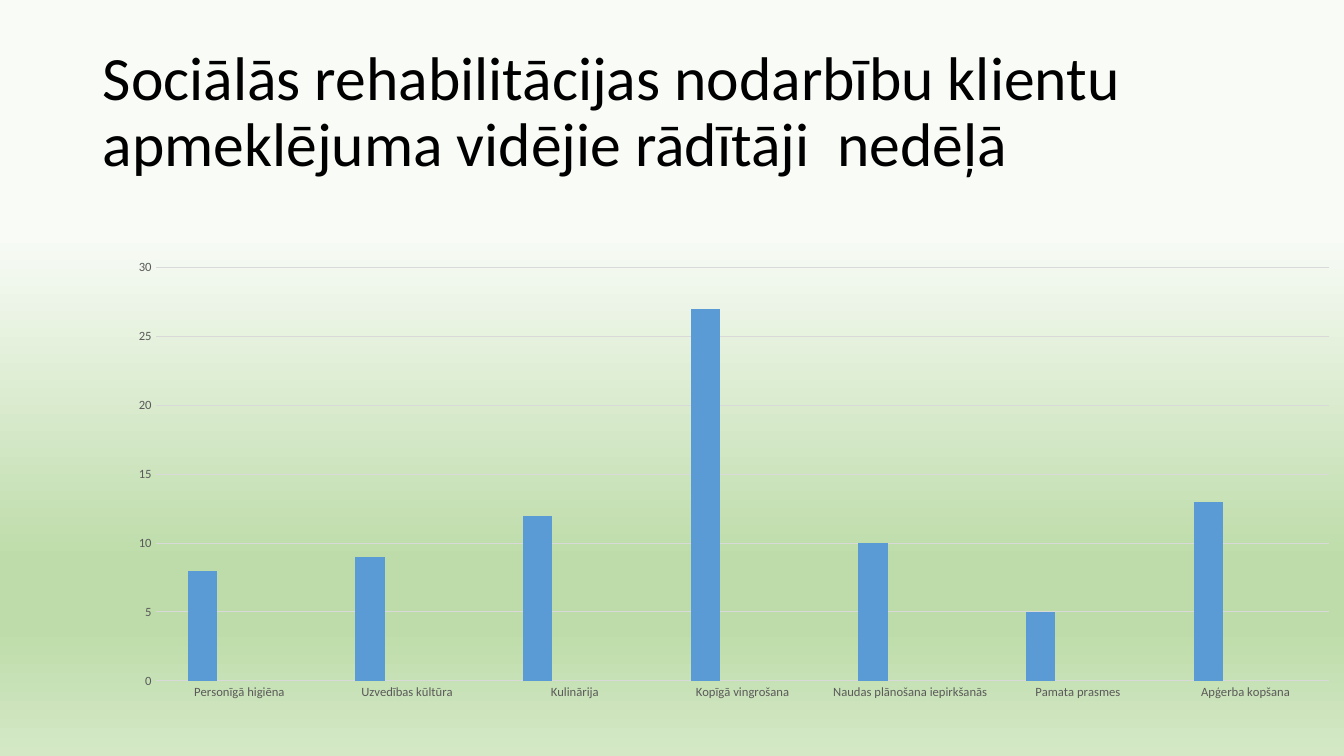
from typing import NamedTuple

from lxml.etree import SubElement
from pptx import Presentation
from pptx.chart.data import CategoryChartData
from pptx.dml.color import RGBColor
from pptx.enum.chart import XL_CHART_TYPE, XL_TICK_MARK
from pptx.enum.text import MSO_ANCHOR, MSO_AUTO_SIZE
from pptx.oxml.ns import qn
from pptx.util import Inches, Pt

FONT = "Calibri"
GRID = "D9D9D9"
LABEL = "595959"


class Stop(NamedTuple):
    percent: int
    color: str


class Series(NamedTuple):
    name: str
    color: str
    values: tuple


class Box(NamedTuple):
    left: float
    top: float
    width: float
    height: float

    def inches(self) -> list:
        return [Inches(side) for side in self]


STOPS = [Stop(31, "F8FBF6"), Stop(74, "BEDCAA"), Stop(83, "BEDCAA"), Stop(100, "D4E8C6")]
TITLE = Box(0.92, 0.4, 11.5, 1.45)
CHART = Box(1.24, 2.12, 12.09, 4.92)
PLOT = {"x": 0.025, "y": 0.109, "w": 0.963, "h": 0.833}
CLASSES = [
    "Personīgā higiēna", "Uzvedības kūltūra", "Kulinārija", "Kopīgā vingrošana",
    "Naudas plānošana iepirkšanās", "Pamata prasmes", "Apģerba kopšana",
]
BLANK = (None,) * len(CLASSES)
SERIES = [
    Series("Series 1", "5B9BD5", (8, 9, 12, 27, 10, 5, 13)),
    Series("Series 2", "ED7D31", BLANK),
    Series("Series 3", "A5A5A5", BLANK),
]


def rgb(code: str) -> RGBColor:
    return RGBColor.from_string(code)


def style(font, size: float, color: str) -> None:
    font.name = FONT
    font.size = Pt(size)
    font.color.rgb = rgb(color)


def rule(line) -> None:
    """Format a thin grey chart line."""
    line.color.rgb = rgb(GRID)
    line.width = Pt(0.75)


def write(shape, text: str, *, size: float, color: str, spacing: float = 1.0) -> None:
    frame = shape.text_frame
    frame.word_wrap = True
    frame.auto_size = MSO_AUTO_SIZE.NONE
    frame.vertical_anchor = MSO_ANCHOR.MIDDLE
    line = frame.paragraphs[0]
    line.line_spacing = spacing
    run = line.add_run()
    run.text = text
    style(run.font, size, color)


def paint(slide, stops: list[Stop]) -> None:
    """Fill the background with a gradient from top to bottom."""
    fill = slide.background.fill
    fill.gradient()
    fill.gradient_angle = 270
    group = slide.element.find(".//" + qn("a:gsLst"))
    for old in list(group):
        group.remove(old)
    for stop in stops:
        node = SubElement(group, qn("a:gs"), pos=str(stop.percent * 1000))
        SubElement(node, qn("a:srgbClr"), val=stop.color)


def place(chart, sides: dict[str, float]) -> None:
    """Fix the inner plot area as fractions of the chart."""
    area = chart.element.find(".//" + qn("c:plotArea"))
    layout = area.find(qn("c:layout"))
    if layout is not None:
        area.remove(layout)
    layout = SubElement(area, qn("c:layout"))
    area.insert(0, layout)
    manual = SubElement(layout, qn("c:manualLayout"))
    SubElement(manual, qn("c:layoutTarget"), val="inner")
    for side in "xy":
        SubElement(manual, qn(f"c:{side}Mode"), val="edge")
    for side, part in sides.items():
        SubElement(manual, qn(f"c:{side}"), val=str(part))


def draw(slide, box: Box, series: list[Series]) -> None:
    data = CategoryChartData()
    data.categories = CLASSES
    for item in series:
        data.add_series(item.name, item.values)
    kind = XL_CHART_TYPE.COLUMN_CLUSTERED
    chart = slide.shapes.add_chart(kind, *box.inches(), data).chart
    chart.has_title = False
    chart.has_legend = False
    style(chart.font, 10, "000000")
    place(chart, PLOT)

    plot = chart.plots[0]
    plot.gap_width = 219
    plot.overlap = -27
    plot.vary_by_categories = False
    for bars, item in zip(plot.series, series):
        bars.format.fill.solid()
        bars.format.fill.fore_color.rgb = rgb(item.color)

    for axis in (chart.category_axis, chart.value_axis):
        axis.major_tick_mark = axis.minor_tick_mark = XL_TICK_MARK.NONE
        style(axis.tick_labels.font, 9, LABEL)
    rule(chart.category_axis.format.line)
    scale = chart.value_axis
    scale.minimum_scale, scale.maximum_scale, scale.major_unit = 0, 30, 5
    scale.format.line.fill.background()
    scale.has_major_gridlines = True
    rule(scale.major_gridlines.format.line)


def main() -> None:
    deck = Presentation()
    deck.slide_width, deck.slide_height = Inches(13.33), Inches(7.5)
    slide = deck.slides.add_slide(deck.slide_layouts[5])
    paint(slide, STOPS)
    title = slide.shapes.title
    title.left, title.top, title.width, title.height = TITLE.inches()
    write(title, "Sociālās rehabilitācijas nodarbību klientu apmeklējuma vidējie rādītāji  nedēļā",
          size=44, color="000000", spacing=0.9)
    title.text_frame.paragraphs[0].alignment = 1
    draw(slide, CHART, SERIES)
    deck.save("out.pptx")


if __name__ == "__main__":
    main()
